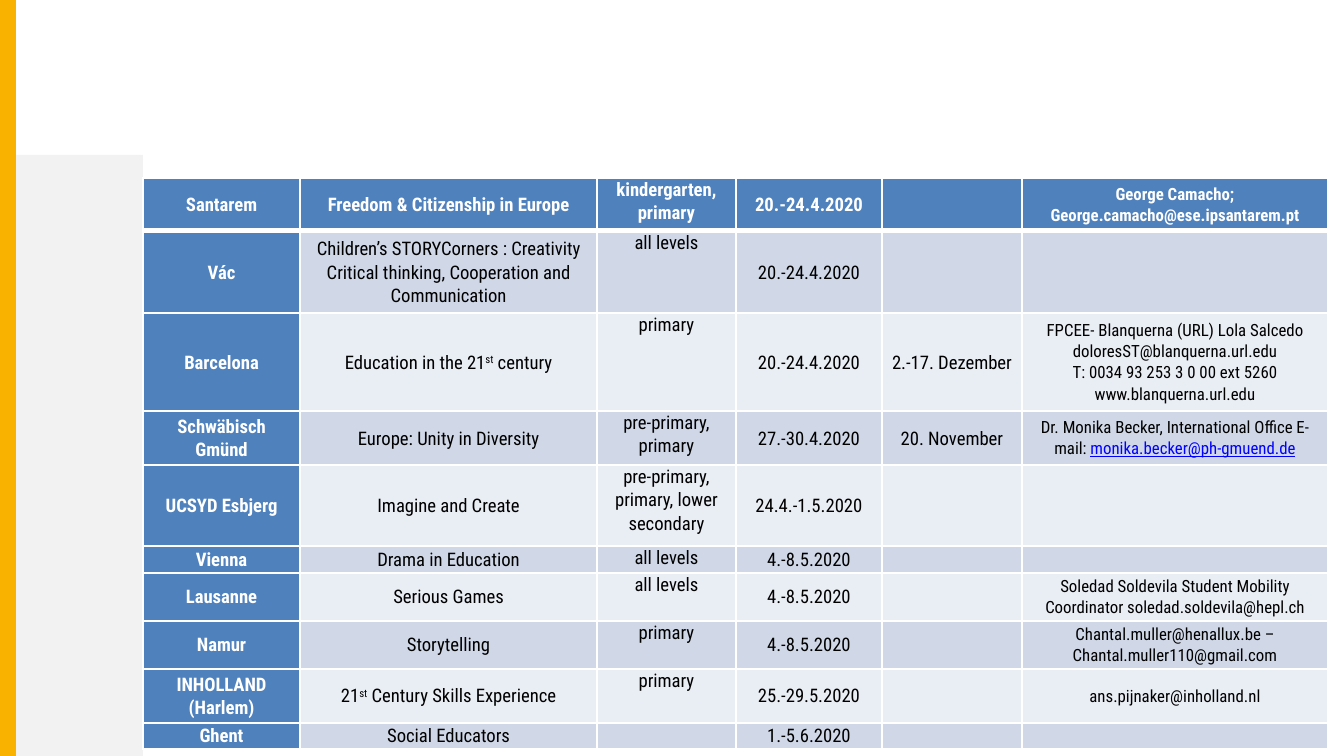
"""Build the slide with the timetable of international weeks."""
from lxml import etree
from pptx import Presentation
from pptx.dml.color import RGBColor
from pptx.enum.shapes import MSO_SHAPE
from pptx.enum.text import MSO_ANCHOR, PP_ALIGN
from pptx.oxml.ns import qn
from pptx.util import Emu, Pt

RECT = MSO_SHAPE.RECTANGLE
TOP, MIDDLE = MSO_ANCHOR.TOP, MSO_ANCHOR.MIDDLE
CENTER = PP_ALIGN.CENTER
PX = 914400 / 134.4
FONT = "Roboto Condensed"
COLORS = {
    "white": "FFFFFF", "black": "000000", "link": "0000FF",
    "yellow": "F9B200", "grey": "F2F2F2",
    "head": "4F81BD", "odd": "D0D8E8", "even": "E9EDF4",
}
HEAD = {"name": FONT, "bold": True}
BODY = {"name": FONT, "bold": False}
COLUMNS = [157, 297, 139, 146, 140, 306]
HEIGHTS = [53, 82, 98, 54, 81, 27, 48, 48, 54, 26]
LEVEL_COLUMN, CONTACT_COLUMN = 2, 5
ROWS = [
    ["Santarem", "Freedom & Citizenship in Europe", "kindergarten, primary",
     "20.-24.4.2020", "", "George Camacho; George.camacho@ese.ipsantarem.pt"],
    ["Vác",
     "Children’s STORYCorners : Creativity\vCritical thinking, Cooperation and Communication",
     "all levels", "20.-24.4.2020", "", ""],
    ["Barcelona", "Education in the 21|st| century", "primary",
     "20.-24.4.2020", "2.-17. Dezember",
     "FPCEE- Blanquerna (URL) Lola Salcedo doloresST@blanquerna.url.edu\n"
     "T: 0034 93 253 3 0 00 ext 5260 www.blanquerna.url.edu"],
    ["Schwäbisch Gmünd", "Europe: Unity in Diversity", "pre-primary, primary",
     "27.-30.4.2020", "20. November",
     "Dr. Monika Becker, International Office E-mail: |monika.becker@ph-gmuend.de|"],
    ["UCSYD Esbjerg", "Imagine and Create",
     "pre-primary, primary, lower secondary", "24.4.-1.5.2020", "", ""],
    ["Vienna", "Drama in Education", "all levels", "4.-8.5.2020", "", ""],
    ["Lausanne", "Serious Games", "all levels", "4.-8.5.2020", "",
     "Soledad Soldevila Student Mobility Coordinator soledad.soldevila@hepl.ch"],
    ["Namur", "Storytelling", "primary", "4.-8.5.2020", "",
     "Chantal.muller@henallux.be – Chantal.muller110@gmail.com"],
    ["INHOLLAND (Harlem)", "21|st| Century Skills Experience", "primary",
     "25.-29.5.2020", "", "ans.pijnaker@inholland.nl"],
    ["Ghent", "Social Educators", "", "1.-5.6.2020", "", ""],
]


def px(n):
    return Emu(round(n * PX))


def rgb(name):
    return RGBColor.from_string(COLORS[name])


class Deck:
    """Hold the style and the current slide, and draw its elements."""

    def __init__(self, prs):
        self.s = prs.slides.add_slide(prs.slide_layouts[6])

    def bar(self, x, y, w, h, color):
        sp = self.s.shapes.add_shape(RECT, px(x), px(y), px(w), px(h))
        sp.shadow.inherit = False
        sp.fill.solid()
        sp.fill.fore_color.rgb = rgb(color)
        sp.line.fill.background()

    def border(self, cell, widths):
        tc_pr = cell._tc.get_or_add_tcPr()
        for side, width in widths.items():
            ln = etree.SubElement(tc_pr, qn(f"a:ln{side}"), w=str(Pt(width)))
            fill = etree.SubElement(ln, qn("a:solidFill"))
            etree.SubElement(fill, qn("a:srgbClr"), val=COLORS["white"])

    def run(self, p, text, size, color, style):
        r = p.add_run()
        r.text = text
        r.font.size = Pt(size)
        r.font.color.rgb = rgb(color)
        for key, value in style.items():
            setattr(r.font, key, value)
        return r

    def paragraph(self, p, text, size, color, style, linked):
        p.alignment, p.line_spacing = CENTER, 1.07
        for i, part in enumerate(text.split("|")):
            for j, line in enumerate(part.split("\v")):
                if j:
                    p.add_line_break()
                if not line:
                    continue
                if i % 2 and linked:
                    self.run(p, line, size, "link", {**style, "underline": True})
                    continue
                r = self.run(p, line, size, color, style)
                if i % 2:
                    r._r.get_or_add_rPr().set("baseline", "30000")
        if not text:
            etree.SubElement(p._p, qn("a:endParaRPr"), sz=str(size * 100))

    def cell(self, cell, row, col, text):
        head = row == 0 or col == 0
        self.border(cell, {"L": 1, "R": 1, "T": 3 if row == 1 else 1,
                           "B": 3 if row == 0 else 1})
        cell.fill.solid()
        cell.fill.fore_color.rgb = rgb("head" if head else "odd" if row % 2 else "even")
        layout = {"margin_left": px(9), "margin_right": px(9),
                  "margin_top": 0, "margin_bottom": 0,
                  "vertical_anchor": TOP if col == LEVEL_COLUMN else MIDDLE}
        for key, value in layout.items():
            setattr(cell, key, value)
        tf = cell.text_frame
        size = 9 if col == CONTACT_COLUMN else 10
        for i, line in enumerate(text.split("\n")):
            p = tf.add_paragraph() if i else tf.paragraphs[0]
            self.paragraph(p, line, size, "white" if head else "black",
                           HEAD if head else BODY, col == CONTACT_COLUMN)

    def table(self, x, y, widths, heights, rows):
        tbl = self.s.shapes.add_table(len(rows), len(widths), px(x), px(y),
                                      px(sum(widths)), px(sum(heights))).table
        for column, w in zip(tbl.columns, widths):
            column.width = px(w)
        for i, (h, texts) in enumerate(zip(heights, rows)):
            tbl.rows[i].height = px(h)
            for j, text in enumerate(texts):
                self.cell(tbl.cell(i, j), i, j, text)


def main():
    prs = Presentation()
    prs.slide_width, prs.slide_height = px(1344), px(756)
    deck = Deck(prs)
    deck.bar(16, 155, 127, 601, "grey")
    deck.bar(0, 0, 16, 756, "yellow")
    deck.table(143, 178, COLUMNS, HEIGHTS, ROWS)
    prs.save("out.pptx")


if __name__ == "__main__":
    main()
